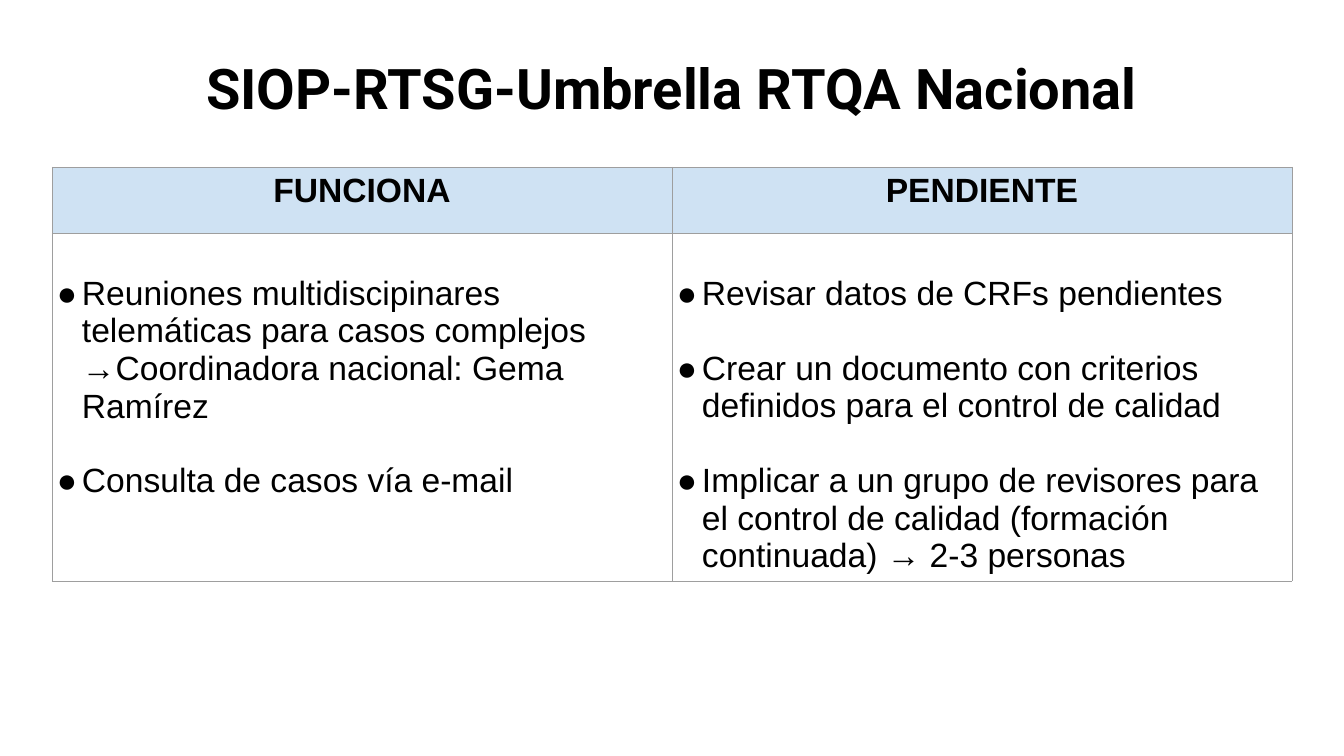
from dataclasses import dataclass

from lxml.etree import SubElement
from pptx import Presentation
from pptx.dml.color import RGBColor as Rgb
from pptx.enum.text import MSO_ANCHOR as Anchor, MSO_AUTO_SIZE as AutoSize, PP_ALIGN as Align
from pptx.oxml.ns import qn
from pptx.util import Emu, Pt

EMU_PER_PX = 18143


def px(length):
    return Emu(length * EMU_PER_PX)


@dataclass(frozen=True)
class Theme:
    title_font: str = "Roboto"
    body_font: str = "Arial"
    title_size: int = 80
    body_size: int = 48
    ink: str = "000000"
    header_fill: str = "CFE2F3"
    body_fill: str = "FFFFFF"
    border: str = "9E9E9E"
    border_width: float = 0.75


THEME = Theme()

TITLE = "SIOP-RTSG-Umbrella RTQA Nacional"
COLUMNS = {
    "FUNCIONA": [
        "Reuniones multidiscipinares telemáticas para casos complejos "
        "→Coordinadora nacional: Gema Ramírez",
        "Consulta de casos vía e-mail",
    ],
    "PENDIENTE": [
        "Revisar datos de CRFs pendientes",
        "Crear un documento con criterios definidos para el control de calidad",
        "Implicar a un grupo de revisores para el control de calidad "
        "(formación continuada) → 2-3 personas",
    ],
}


def set_font(paragraph, name, size, bold):
    font = paragraph.font
    font.name, font.size, font.bold = name, Pt(size), bold
    font.color.rgb = Rgb.from_string(THEME.ink)


def add_bullet(paragraph):
    properties = paragraph._p.get_or_add_pPr()
    properties.set("marL", str(px(25)))
    properties.set("indent", str(px(-29)))
    color = SubElement(properties, qn("a:buClr"))
    SubElement(color, qn("a:srgbClr"), val=THEME.ink)
    SubElement(properties, qn("a:buFont"), typeface=THEME.body_font)
    SubElement(properties, qn("a:buChar"), char="●")


def style_cell(cell, fill, top=5):
    cell.margin_left = cell.margin_right = cell.margin_bottom = px(5)
    cell.margin_top = px(top)
    # Borders come before the fill in the cell properties
    properties = cell._tc.get_or_add_tcPr()
    for side in ("lnL", "lnR", "lnT", "lnB"):
        line = SubElement(properties, qn(f"a:{side}"), w=str(Pt(THEME.border_width)))
        solid = SubElement(line, qn("a:solidFill"))
        SubElement(solid, qn("a:srgbClr"), val=THEME.border)
    cell.fill.solid()
    cell.fill.fore_color.rgb = Rgb.from_string(fill)


def place_title(slide, left, top, width, height):
    title = slide.shapes.title
    title.left, title.top, title.width, title.height = map(px, (left, top, width, height))
    frame = title.text_frame
    frame.text = TITLE
    frame.word_wrap = True
    frame.auto_size = AutoSize.NONE
    frame.vertical_anchor = Anchor.BOTTOM
    frame.margin_left = frame.margin_right = frame.margin_top = frame.margin_bottom = px(3)
    heading = frame.paragraphs[0]
    heading.alignment = Align.CENTER
    heading.line_spacing = 0.8
    set_font(heading, THEME.title_font, THEME.title_size, True)


def place_status_table(slide, left, top, width, height, header_height=66):
    frame = slide.shapes.add_table(2, len(COLUMNS), *map(px, (left, top, width, height)))
    table = frame.table
    table.first_row = table.horz_banding = False
    table.rows[0].height = px(header_height)
    table.rows[1].height = px(height - header_height)

    for column, (status, tasks) in enumerate(COLUMNS.items()):
        # Header
        header = table.cell(0, column)
        style_cell(header, THEME.header_fill)
        header.text = status
        label = header.text_frame.paragraphs[0]
        label.alignment = Align.CENTER
        set_font(label, THEME.body_font, THEME.body_size, True)

        # Bulleted tasks, one line of space above each
        body = table.cell(1, column)
        style_cell(body, THEME.body_fill, top=42)
        body.text = "\n".join(tasks)
        for position, task in enumerate(body.text_frame.paragraphs):
            add_bullet(task)
            task.space_before = Pt(53.5 if position else 0)
            set_font(task, THEME.body_font, THEME.body_size, False)


def main():
    deck = Presentation()
    deck.slide_width, deck.slide_height = px(1344), px(756)
    slide = deck.slides.add_slide(deck.slide_layouts[0])
    subtitle = slide.placeholders[1]._element
    subtitle.getparent().remove(subtitle)

    place_title(slide, 66, 25, 1212, 98)
    place_status_table(slide, 52, 167, 1240, 414)
    deck.save("out.pptx")


if __name__ == "__main__":
    main()
